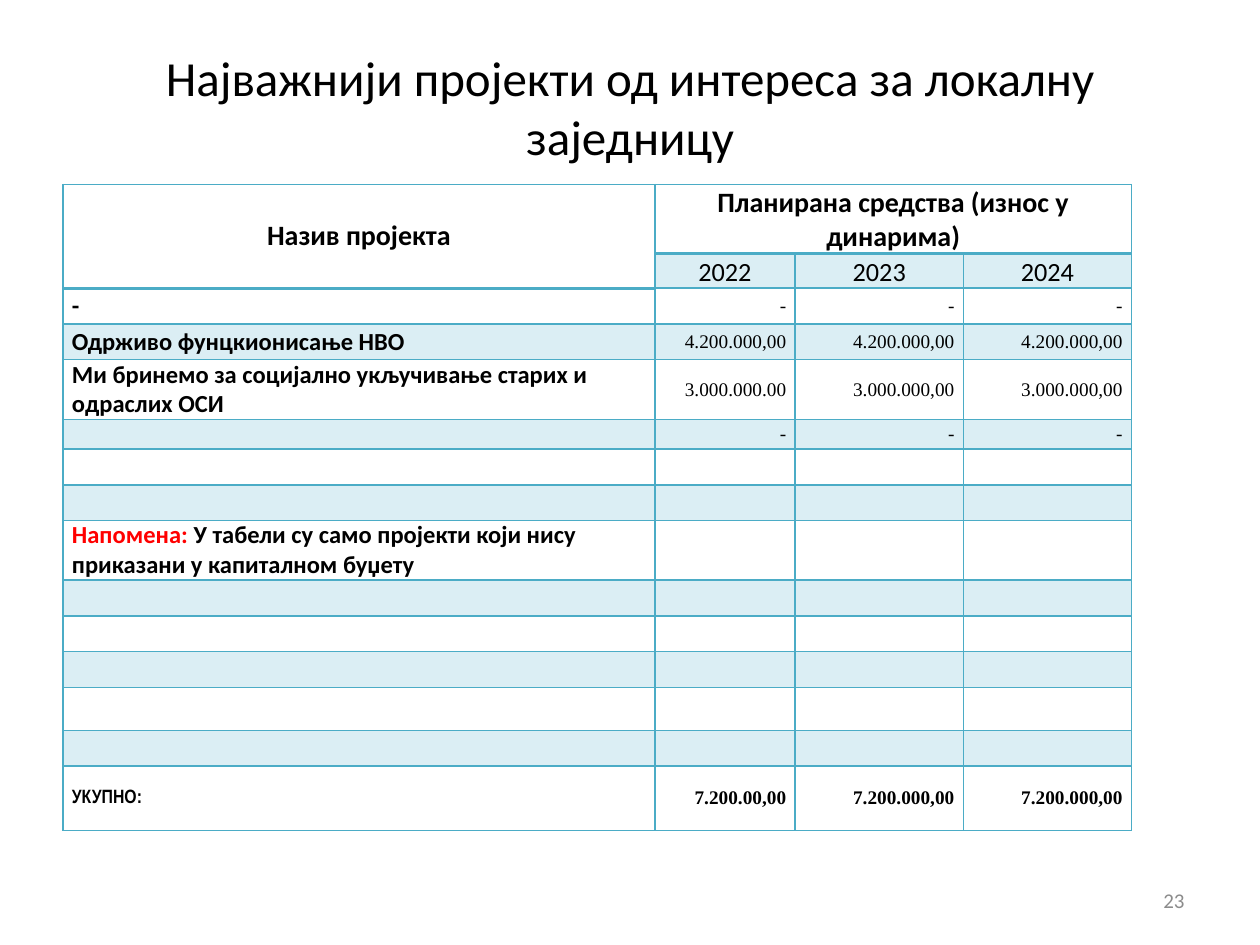
from lxml.etree import SubElement
from pptx import Presentation
from pptx.dml.color import RGBColor
from pptx.enum.text import MSO_ANCHOR, PP_ALIGN
from pptx.oxml.ns import qn
from pptx.util import Cm, Pt

TITLE = "Најважнији пројекти од интереса за локалну заједницу"
PAGE = "23"
EMPTY = ["", "", "", ""]
ROWS = [
    ["Назив пројекта", "Планирана средства (износ у динарима)", "", ""],
    ["", "2022", "2023", "2024"],
    ["-", "-", "-", "-"],
    ["Одрживо фунцкионисање НВО", "4.200.000,00", "4.200.000,00", "4.200.000,00"],
    ["Ми бринемо за социјално укључивање старих и одраслих ОСИ",
     "3.000.000.00", "3.000.000,00", "3.000.000,00"],
    ["", "-", "-", "-"],
    EMPTY,
    EMPTY,
    ["Напомена: |У табели су само пројекти који нису приказани у капиталном буџету",
     "", "", ""],
    EMPTY,
    EMPTY,
    EMPTY,
    EMPTY,
    EMPTY,
    ["УКУПНО:", "7.200.00,00", "7.200.000,00", "7.200.000,00"],
]
WIDTHS = [11.93, 2.83, 3.39, 3.39]
HEIGHTS = [1.4, 0.69, 0.72, 0.72, 1.2, 0.6, 0.72, 0.72, 1.2,
           0.72, 0.72, 0.72, 0.87, 0.72, 1.3]
LAST = len(ROWS) - 1
TEAL, BAND, BLACK, RED, GREY = "4BACC6", "DBEEF4", "000000", "FF0000", "8C8C8C"


def rgb(color):
    """Turn a hex string into a colour."""
    return RGBColor.from_string(color)


def style(r, size, color=BLACK, name="Calibri", bold=False):
    """Format one run."""
    r.font.size, r.font.name, r.font.bold = Pt(size), name, bold
    r.font.color.rgb = rgb(color)


def look(row, col):
    """Give size, font, weight and alignment for a table position."""
    if row == 0:
        return 16, "Calibri", True, PP_ALIGN.CENTER
    if row == 1:
        return 15, "Calibri", False, PP_ALIGN.CENTER
    if col > 0:
        return 11, "Times New Roman", row == LAST, PP_ALIGN.RIGHT
    if row == LAST:
        return 11, "Arial Narrow", True, PP_ALIGN.LEFT
    return 14, "Calibri", True, PP_ALIGN.LEFT


def thick_below(row, col):
    """Tell whether a header rule runs under this position."""
    return row == (1 if col == 0 else 0)


def set_borders(cell, row, col):
    """Draw the four borders of a cell."""
    under = thick_below(row, col) or (row, col) == (0, 0)
    widths = {"L": 1, "R": 1, "T": 2 if thick_below(row - 1, col) else 1,
              "B": 2 if under else 1}
    tcPr = cell._tc.get_or_add_tcPr()
    for side, width in widths.items():
        ln = SubElement(tcPr, qn(f"a:ln{side}"), w=str(Pt(width)))
        fill = SubElement(ln, qn("a:solidFill"))
        SubElement(fill, qn("a:srgbClr"), val=TEAL)


def fill_cell(cell, row, col, text):
    """Write and format one table cell."""
    size, name, bold, align = look(row, col)
    set_borders(cell, row, col)
    if row % 2 and (row, col) != (1, 0):
        cell.fill.solid()
        cell.fill.fore_color.rgb = rgb(BAND)
    else:
        cell.fill.background()
    cell.margin_left = cell.margin_right = Cm(0.18)
    cell.margin_top = cell.margin_bottom = 0
    bottom = row < 2 and col > 0
    cell.vertical_anchor = MSO_ANCHOR.BOTTOM if bottom else MSO_ANCHOR.MIDDLE
    p = cell.text_frame.paragraphs[0]
    p.alignment = align
    if not text:
        SubElement(p._p, qn("a:endParaRPr"), sz="1100")
        return
    parts = text.split("|")
    for i, part in enumerate(parts):
        r = p.add_run()
        r.text = part
        style(r, size, RED if i < len(parts) - 1 else BLACK, name, bold)


def add_table(s):
    """Build the project table."""
    shape = s.shapes.add_table(len(ROWS), len(WIDTHS), Cm(1.27), Cm(3.72),
                               Cm(sum(WIDTHS)), Cm(sum(HEIGHTS)))
    table = shape.table
    table.first_row = table.horz_banding = False
    for column, width in zip(table.columns, WIDTHS):
        column.width = Cm(width)
    for row, height in zip(table.rows, HEIGHTS):
        row.height = Cm(height)
    for i, texts in enumerate(ROWS):
        for j, text in enumerate(texts):
            fill_cell(table.cell(i, j), i, j, text)
    table.cell(0, 0).merge(table.cell(1, 0))
    table.cell(0, 1).merge(table.cell(0, 3))


def set_text(sp, box, text, align, size, color):
    """Place a text shape and fill it with one line of text."""
    sp.left, sp.top, sp.width, sp.height = map(Cm, box)
    tf = sp.text_frame
    tf.text, tf.word_wrap, tf.vertical_anchor = text, True, MSO_ANCHOR.MIDDLE
    p = tf.paragraphs[0]
    p.alignment = align
    style(p.runs[0], size, color)


def main():
    """Build and save the slide."""
    prs = Presentation()
    prs.slide_width, prs.slide_height = Cm(25.4), Cm(19.05)
    s = prs.slides.add_slide(prs.slide_layouts[5])
    set_text(s.shapes.title, (1.27, 0.76, 22.86, 2.77), TITLE,
             PP_ALIGN.CENTER, 28, BLACK)
    add_table(s)
    number = s.shapes.add_textbox(0, 0, 0, 0)
    set_text(number, (18.2, 17.65, 5.93, 1.01), PAGE, PP_ALIGN.RIGHT, 12, GREY)
    prs.save("out.pptx")


if __name__ == "__main__":
    main()
